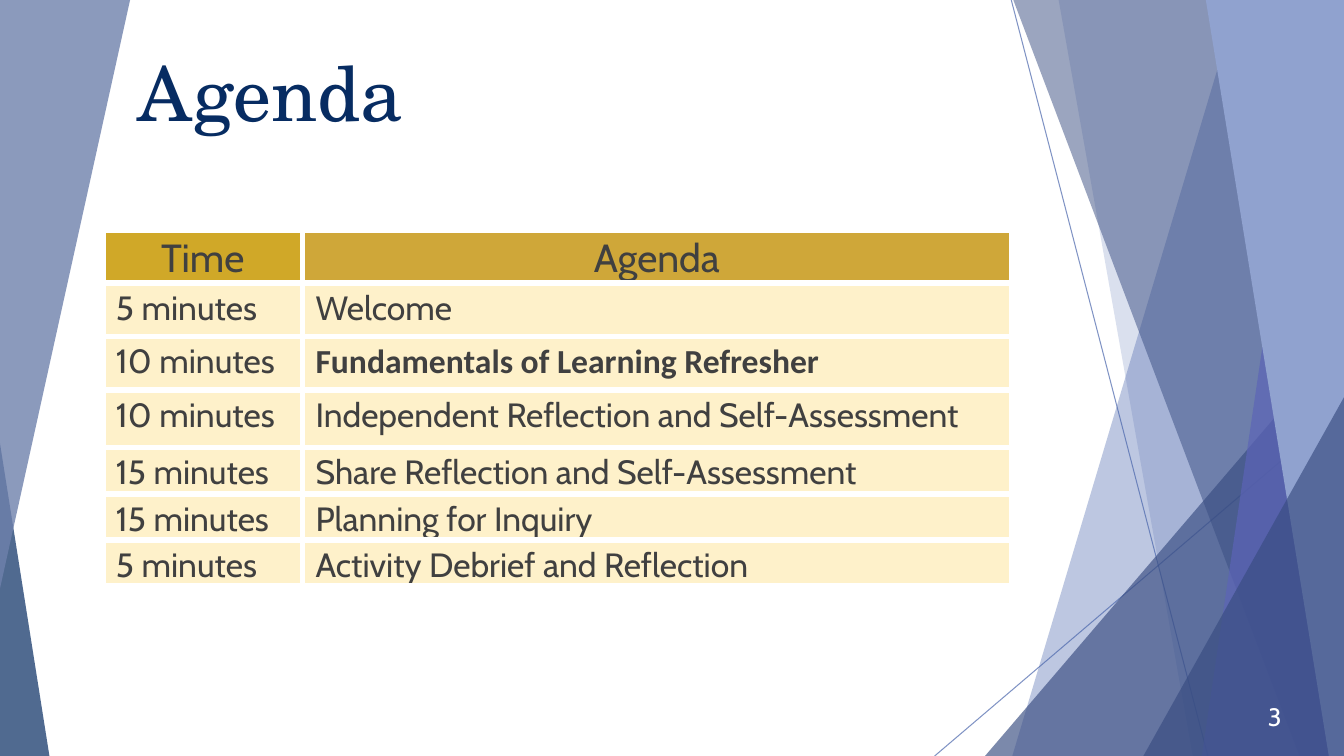
from dataclasses import dataclass
from typing import Optional

from lxml.etree import SubElement
from pptx import Presentation
from pptx.dml.color import RGBColor
from pptx.enum.shapes import MSO_CONNECTOR as Conn, MSO_SHAPE as Shape
from pptx.enum.text import MSO_ANCHOR as Anchor, MSO_AUTO_SIZE as AutoSize, PP_ALIGN as Align
from pptx.oxml.ns import qn
from pptx.util import Pt

PX = 9144  # EMU per px, 100 px to the inch
W, H = 1333, 750
BLUE, NAVY, TITLE_BLUE = "4A66AC", "384C81", "072C62"
WHITE, GREY, CREAM = "FFFFFF", "404040", "FEF1CA"


@dataclass
class Band:
    """A band that runs from two points on the left to the right edge."""
    top_x: int
    bottom_x: int
    color: str
    opacity: int = 100


@dataclass
class Corner:
    """A right triangle whose apex lies above its left (0) or right (1) end."""
    x: int
    y: int
    w: int
    h: int
    apex: int
    color: str
    opacity: int
    flipped: bool = False


@dataclass
class Row:
    h: int
    time: str
    topic: str
    space_after: Optional[int] = None
    bold: bool = False


LINES = [(1003, 0, 1198, H), (W, 404, 927, H)]
DECOR = [
    Band(1228, 1004, BLUE, 36),
    Band(1050, 1183, BLUE, 20),
    Corner(977, 334, 356, 416, 1, NAVY, 66),
    Band(1005, 1289, NAVY, 50),
    Band(1303, 1192, "5C64B7", 70),
    Band(1196, 1318, "90A2CF"),
    Corner(1134, 394, 199, 356, 1, NAVY, 66),
    Corner(0, 440, 49, 310, 0, TITLE_BLUE, 70),
    Corner(0, 0, 129, 584, 0, "6F81AC", 80, flipped=True),
]
HEADER_FILLS = ("D0A828", "CFA739")
COLUMNS = (198, 703)
ROWS = [
    Row(53, "Time", "Agenda", 4),
    Row(53, "5 minutes", "Welcome", 4),
    Row(53, "10 minutes", "Fundamentals of Learning Refresher", 4, bold=True),
    Row(57, "10 minutes", "Independent Reflection and Self-Assessment", 6),
    Row(46, "15 minutes", "Share Reflection and Self-Assessment", 6),
    Row(46, "15 minutes", "Planning for Inquiry", 6),
    Row(43, "5 minutes", "Activity Debrief and Reflection"),
]


def px(*lengths: int) -> list[int]:
    return [n * PX for n in lengths]


def paint(fmt, color: str, opacity: int = 100) -> None:
    """Give a fill a solid colour, see-through below 100 percent."""
    fmt.solid()
    fmt.fore_color.rgb = RGBColor.from_string(color)
    if opacity < 100:
        clr = fmt._xPr.find(qn("a:solidFill"))[0]
        SubElement(clr, qn("a:alpha"), val=str(opacity * 1000))


def write(p, text: str, font: str, size: int, color: str, align=Align.LEFT, bold=False) -> None:
    p.text = text
    p.alignment = align
    f = p.font
    f.name, f.size, f.bold = font, Pt(size), bold
    f.color.rgb = RGBColor.from_string(color)


def draw_line(shapes, ends: tuple[int, int, int, int]) -> None:
    s = shapes.add_connector(Conn.STRAIGHT, *px(*ends))
    s.line.width = Pt(0.75)
    paint(s.line.fill, BLUE, 70)
    SubElement(s._element.spPr, qn("a:effectLst"))


def draw_decor(shapes, d: Band | Corner) -> None:
    if isinstance(d, Band):
        fb = shapes.build_freeform(d.top_x, 0, scale=PX)
        fb.add_line_segments([(W, 0), (W, H), (d.bottom_x, H)], close=True)
        s = fb.convert_to_shape()
    else:
        s = shapes.add_shape(Shape.ISOSCELES_TRIANGLE, *px(d.x, d.y, d.w, d.h))
        s.adjustments[0] = d.apex
        if d.flipped:
            s._element.spPr.find(qn("a:xfrm")).set("flipV", "1")
    s.shadow.inherit = False
    s.line.fill.background()
    paint(s.fill, d.color, d.opacity)


def border(cell) -> None:
    tc_pr = cell._tc.get_or_add_tcPr()
    for side in ("lnL", "lnR", "lnT", "lnB"):
        ln = SubElement(tc_pr, qn(f"a:{side}"), w=str(Pt(4.5)))
        SubElement(SubElement(ln, qn("a:solidFill")), qn("a:srgbClr"), val=WHITE)


def draw_agenda(shapes) -> None:
    heights = [row.h for row in ROWS]
    frame = shapes.add_table(len(ROWS), len(COLUMNS), *px(102, 228, sum(COLUMNS), sum(heights)))
    table = frame.table
    table.first_row = table.horz_banding = False
    for col, w in zip(table.columns, COLUMNS):
        col.width = w * PX
    for i, row in enumerate(ROWS):
        table.rows[i].height = row.h * PX
        header = i == 0
        for j, text in enumerate((row.time, row.topic)):
            cell = table.cell(i, j)
            border(cell)
            paint(cell.fill, HEADER_FILLS[j] if header else CREAM)
            cell.margin_left, cell.margin_top, cell.margin_right, cell.margin_bottom = px(
                3 if header else 13, 2, 3, 0)
            bold = row.bold and j == 1
            p = cell.text_frame.paragraphs[0]
            write(p, text, "Calibri" if bold else "Cabin", 28 if header else 24, GREY,
                  Align.CENTER if header else Align.LEFT, bold)
            p.line_spacing = 1.07
            if j == 1 and row.space_after:
                p.space_after = Pt(row.space_after)


def main() -> None:
    prs = Presentation()
    prs.slide_width, prs.slide_height = px(W, H)
    slide = prs.slides.add_slide(prs.slide_layouts[5])
    shapes = slide.shapes

    # Background facets
    for ends in LINES:
        draw_line(shapes, ends)
    for d in DECOR:
        draw_decor(shapes, d)

    # Title, brought in front of the facets
    title = shapes.title
    shapes._spTree.append(title._element)
    title.left, title.top, title.width, title.height = px(126, 41, 940, 144)
    tf = title.text_frame
    tf.auto_size, tf.vertical_anchor = AutoSize.NONE, Anchor.TOP
    write(tf.paragraphs[0], "Agenda", "TeX Gyre Schola", 54, TITLE_BLUE)

    draw_agenda(shapes)

    # Slide number
    tf = shapes.add_textbox(*px(1206, 691, 75, 40)).text_frame
    tf.word_wrap, tf.vertical_anchor = True, Anchor.MIDDLE
    write(tf.paragraphs[0], "3", "Cabin", 18, WHITE, Align.RIGHT)

    prs.save("out.pptx")


if __name__ == "__main__":
    main()
